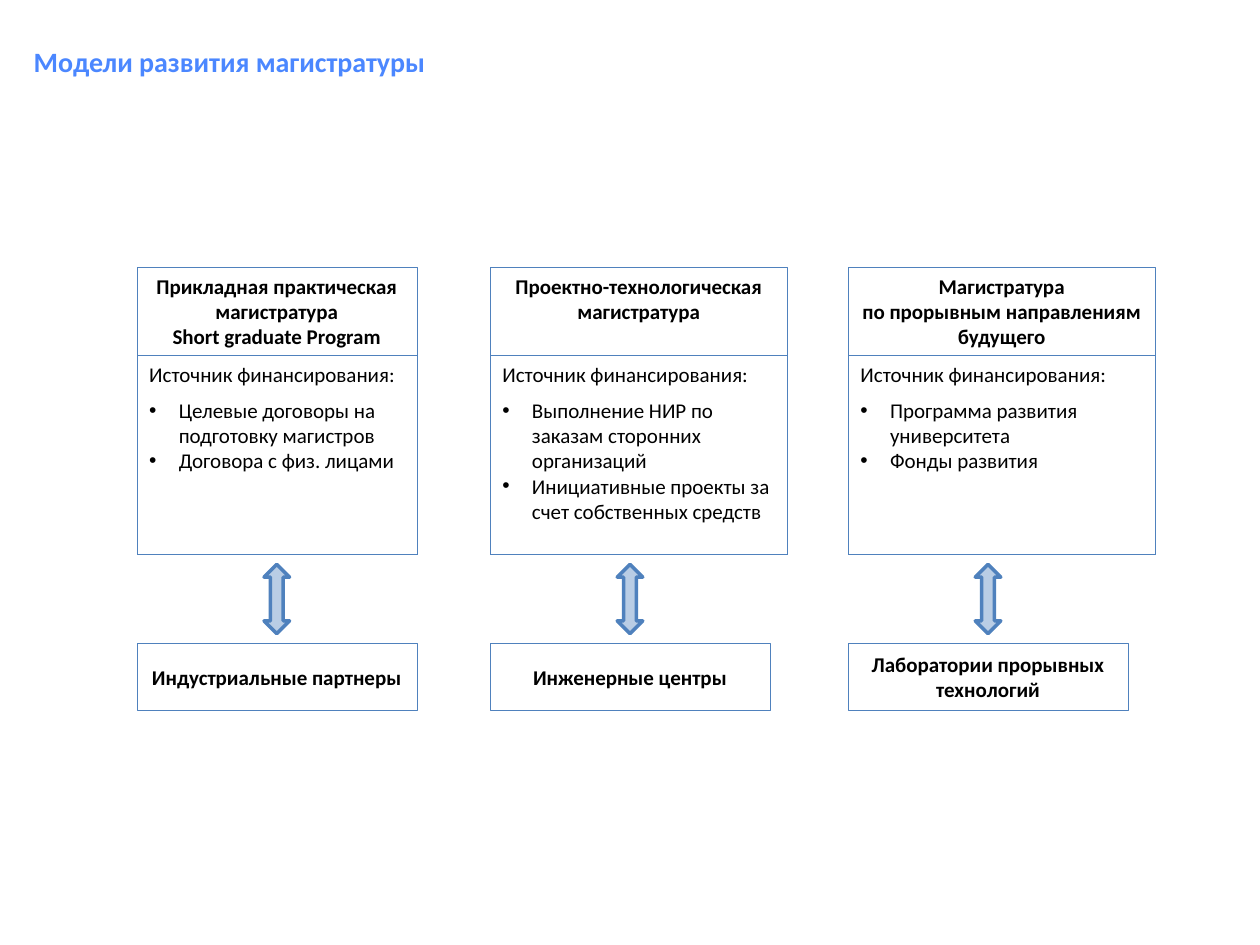
from lxml.etree import SubElement
from pptx import Presentation
from pptx.dml.color import RGBColor
from pptx.enum.shapes import MSO_SHAPE as Shape
from pptx.enum.text import MSO_ANCHOR as Anchor, PP_ALIGN as Align
from pptx.oxml.ns import qn
from pptx.util import Pt

BLACK = RGBColor(0x00, 0x00, 0x00)
WHITE = RGBColor(0xFF, 0xFF, 0xFF)
BORDER_BLUE = RGBColor(0x4F, 0x81, 0xBD)
ARROW_BLUE = RGBColor(0xB9, 0xCD, 0xE5)
TITLE_BLUE = RGBColor(0x4B, 0x87, 0xFF)

CARD_TOP, BODY_TOP, CARD_BOTTOM = 152.6, 203.2, 316.7
ARROW_TOP, ARROW_WIDTH, ARROW_HEIGHT = 322.5, 14.6, 39.6
PARTNER_TOP, PARTNER_WIDTH, PARTNER_HEIGHT = 367.4, 160, 38.6
BULLET_INDENT = 16.9

FUNDING = "Источник финансирования:"
MODELS = [
    (78.2, 160,
     ["Прикладная практическая магистратура", "Short graduate Program"],
     ["Целевые договоры на подготовку магистров", "Договора с физ. лицами"],
     "Индустриальные партнеры"),
    (280, 170,
     ["Проектно-технологическая магистратура"],
     ["Выполнение НИР по заказам сторонних организаций",
      "Инициативные проекты за счет собственных средств"],
     "Инженерные центры"),
    (484.6, 175.6,
     ["Магистратура", "по прорывным направлениям будущего"],
     ["Программа развития университета", "Фонды развития"],
     "Лаборатории прорывных технологий"),
]


def add_block(slide, kind, left, top, width, height, fill, line_width):
    """Add a filled, outlined shape with top-anchored text."""
    shape = slide.shapes.add_shape(kind, Pt(left), Pt(top), Pt(width), Pt(height))
    shape.shadow.inherit = False
    shape.fill.solid()
    shape.fill.fore_color.rgb = fill
    shape.line.color.rgb = BORDER_BLUE
    shape.line.width = Pt(line_width)
    shape.text_frame.word_wrap = True
    shape.text_frame.vertical_anchor = Anchor.TOP
    return shape


def add_box(slide, left, top, width, height):
    """Add a thin-bordered white rectangle and return its text frame."""
    return add_block(slide, Shape.RECTANGLE, left, top, width, height, WHITE, 0.25).text_frame


def add_run(paragraph, text, size=12, color=BLACK, bold=False):
    """Add one formatted run to a paragraph."""
    run = paragraph.add_run()
    run.text = text
    run.font.name = "Calibri"
    run.font.size = Pt(size)
    run.font.bold = bold
    run.font.color.rgb = color


def make_bullet(paragraph):
    """Give a paragraph a round bullet with a hanging indent."""
    properties = paragraph._p.get_or_add_pPr()
    properties.set("marL", str(Pt(BULLET_INDENT)))
    properties.set("indent", str(-Pt(BULLET_INDENT)))
    SubElement(properties, qn("a:buFont"), typeface="Arial")
    SubElement(properties, qn("a:buChar"), char="•")


def write_heading(frame, lines):
    """Write centred bold paragraphs."""
    for index, line in enumerate(lines):
        paragraph = frame.add_paragraph() if index else frame.paragraphs[0]
        paragraph.alignment = Align.CENTER
        add_run(paragraph, line, bold=True)


def write_funding(frame, sources):
    """Write the funding label and its bulleted sources."""
    label = frame.paragraphs[0]
    label.alignment = Align.LEFT
    label.space_after = Pt(6)
    add_run(label, FUNDING)
    for source in sources:
        paragraph = frame.add_paragraph()
        paragraph.alignment = Align.LEFT
        make_bullet(paragraph)
        add_run(paragraph, source)


def add_model(slide, left, width, heading, sources, partner):
    """Add a model card, its arrow and its partner box."""
    write_heading(add_box(slide, left, CARD_TOP, width, CARD_BOTTOM - CARD_TOP), heading)
    write_funding(add_box(slide, left, BODY_TOP, width, CARD_BOTTOM - BODY_TOP), sources)
    partner_frame = add_box(slide, left, PARTNER_TOP, PARTNER_WIDTH, PARTNER_HEIGHT)
    partner_frame.vertical_anchor = Anchor.MIDDLE
    write_heading(partner_frame, [partner])
    arrow_left = left + (PARTNER_WIDTH - ARROW_WIDTH) / 2
    add_block(slide, Shape.UP_DOWN_ARROW, arrow_left, ARROW_TOP,
              ARROW_WIDTH, ARROW_HEIGHT, ARROW_BLUE, 2)


def add_title(slide, text):
    """Add the slide title."""
    frame = slide.shapes.add_textbox(Pt(12.2), Pt(22), Pt(468), Pt(48.2)).text_frame
    frame.word_wrap = True
    add_run(frame.paragraphs[0], text, 16, TITLE_BLUE, True)


def main():
    """Build and save the slide."""
    presentation = Presentation()
    presentation.slide_width, presentation.slide_height = Pt(720), Pt(540)
    slide = presentation.slides.add_slide(presentation.slide_layouts[6])
    for model in MODELS:
        add_model(slide, *model)
    add_title(slide, "Модели развития магистратуры")
    presentation.save("out.pptx")


if __name__ == "__main__":
    main()
